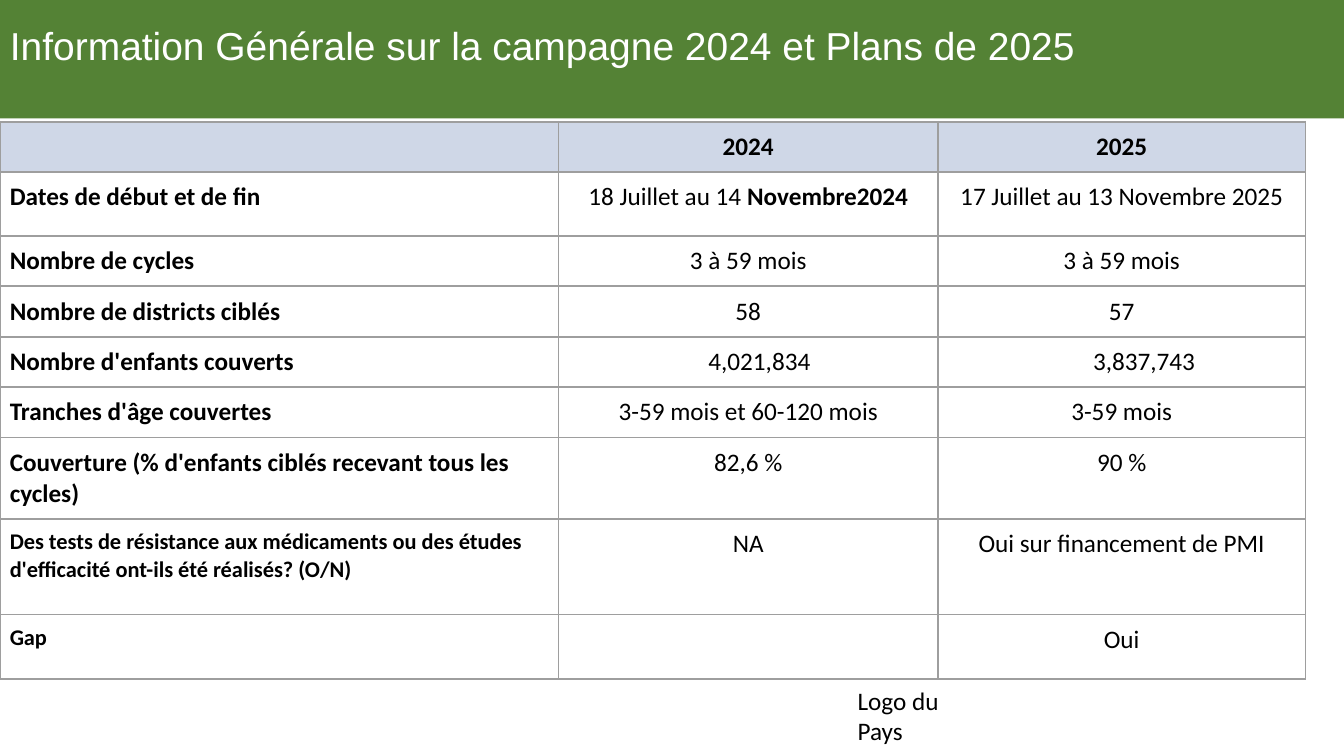
from lxml.etree import SubElement
from pptx import Presentation
from pptx.dml.color import RGBColor
from pptx.enum.shapes import MSO_SHAPE
from pptx.enum.text import MSO_ANCHOR, PP_ALIGN
from pptx.oxml.ns import qn
from pptx.util import Pt


def color(code):
    return RGBColor.from_string(code)


def write(para, text, **extra):
    run = para.add_run()
    run.text = text
    look = {"name": "Calibri", "size": Pt(18), "bold": False} | extra
    tint = look.pop("tint", "000000")
    for key, value in look.items():
        setattr(run.font, key, value)
    run.font.color.rgb = color(tint)
    return run


prs = Presentation()
prs.slide_width, prs.slide_height = Pt(960), Pt(540)
slide = prs.slides.add_slide(prs.slide_layouts[6])
shapes = slide.shapes

# Country label at the foot
label = shapes.add_textbox(Pt(605.5), Pt(486), Pt(101.5), Pt(51)).text_frame
label.word_wrap = True
write(label.paragraphs[0], "Logo du Pays")

# Campaign table: label, 2024, 2025, row height, label size
rows = [
    ("", "2024", "2025", 36, 18),
    ("Dates de début et de fin", "18 Juillet au 14 Novembre2024",
     "17 Juillet au 13 Novembre 2025", 45.5, 18),
    ("Nombre de cycles", "3 à 59 mois", "3 à 59 mois", 36, 18),
    ("Nombre de districts ciblés", "58", "57", 36, 18),
    ("Nombre d'enfants couverts", "4,021,834", "3,837,743", 36, 18),
    ("Tranches d'âge couvertes", "3-59 mois et 60-120 mois", "3-59 mois", 36, 18),
    ("Couverture (% d'enfants ciblés recevant tous les cycles)",
     "82,6 %", "90 %", 58, 18),
    ("Des tests de résistance aux médicaments ou des études d'efficacité "
     "ont-ils été réalisés? (O/N)", "NA", "Oui sur financement de PMI", 68.5, 16),
    ("Gap", "", "Oui", 46, 16),
]
widths = [399, 271, 262.5]
high = sum(row[3] for row in rows)
table = shapes.add_table(len(rows), 3, 0, Pt(87), Pt(sum(widths)), Pt(high)).table
for col, width in zip(table.columns, widths):
    col.width = Pt(width)

for r, (*texts, height, size) in enumerate(rows):
    table.rows[r].height = Pt(height)
    for c, text in enumerate(texts):
        cell = table.cell(r, c)
        for side in ("left", "right", "top", "bottom"):
            setattr(cell, f"margin_{side}", Pt(7))

        # Borders come before the fill in the cell properties
        props = cell._tc.get_or_add_tcPr()
        for tag in ("a:lnL", "a:lnR", "a:lnT", "a:lnB"):
            line = SubElement(props, qn(tag), w=str(Pt(1.5)))
            paint = SubElement(line, qn("a:solidFill"))
            SubElement(paint, qn("a:srgbClr"), val="9E9E9E")
        if r == 0:
            cell.fill.solid()
            cell.fill.fore_color.rgb = color("CFD7E7")
        else:
            cell.fill.background()

        para = cell.text_frame.paragraphs[0]
        para.alignment = PP_ALIGN.CENTER if c else PP_ALIGN.LEFT
        # The month of the 2024 end date is bold
        start, month, end = text.partition("Novembre2024")
        if start:
            write(para, start, bold=r == 0 or c == 0, size=Pt(18 if c else size))
        if month:
            write(para, month + end, bold=True)

# Child counts sit right of centre
for c, left in ((1, 16), (2, 32)):
    cell = table.cell(4, c)
    cell.vertical_anchor = MSO_ANCHOR.MIDDLE
    cell.margin_left = Pt(left)
    cell.margin_right = cell.margin_top = cell.margin_bottom = 0

# Title band
band = shapes.add_shape(MSO_SHAPE.RECTANGLE, 0, 0, Pt(960), Pt(84.5))
band.shadow.inherit = False
band.fill.solid()
band.fill.fore_color.rgb = color("548235")
band.line.fill.background()
frame = band.text_frame
frame.word_wrap = True
frame.vertical_anchor = MSO_ANCHOR.MIDDLE
para = frame.paragraphs[0]
para.alignment = PP_ALIGN.LEFT
para.line_spacing = 0.9
run = write(para, "Information Générale sur la campagne 2024 et Plans de 2025",
            name="Arial", size=Pt(48), tint="FFFFFF")
run.font._element.set("baseline", "30000")

prs.save("out.pptx")
